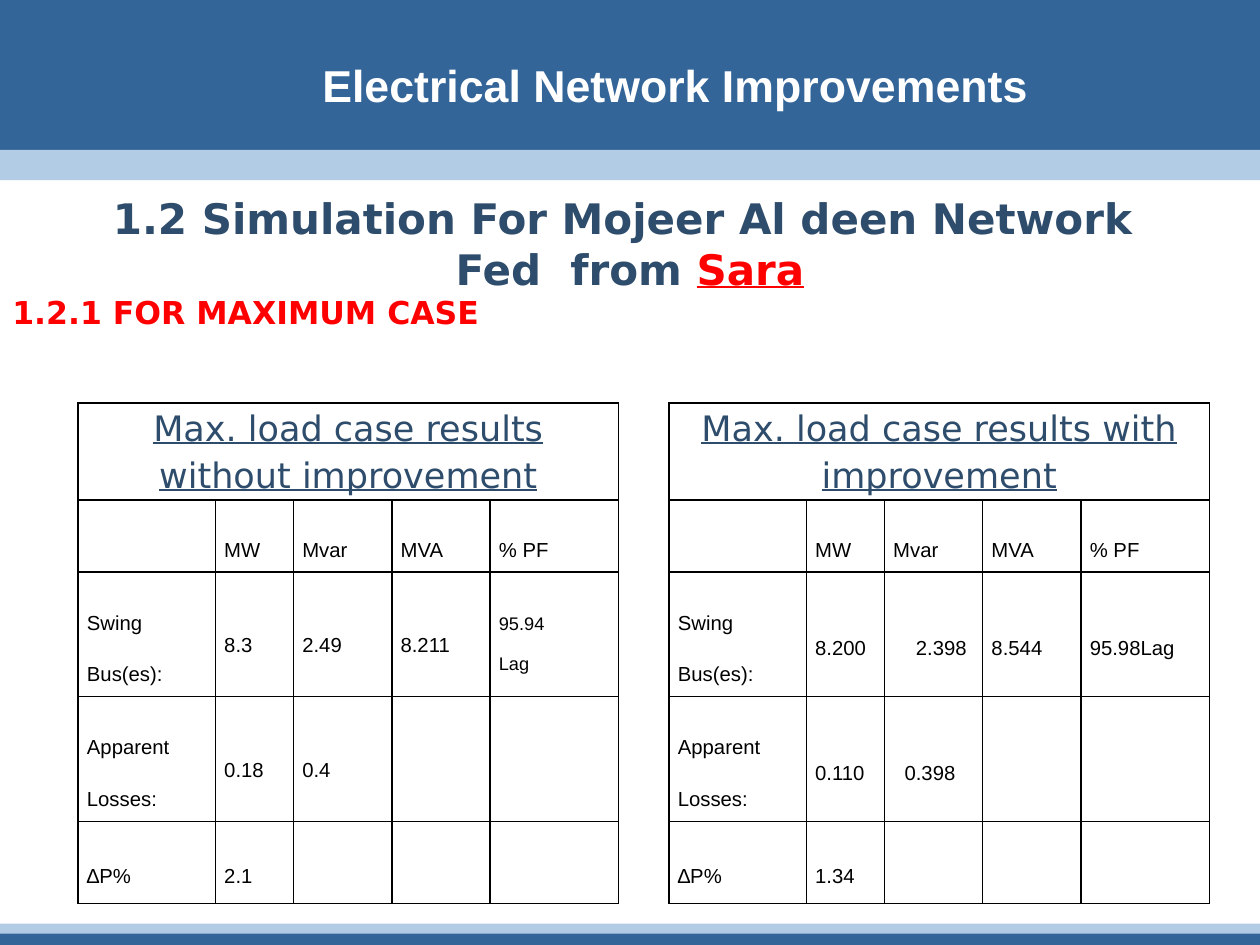
from lxml import etree
from pptx import Presentation
from pptx.dml.color import RGBColor
from pptx.enum.shapes import MSO_SHAPE
from pptx.enum.text import MSO_ANCHOR, PP_ALIGN
from pptx.oxml.ns import qn
from pptx.util import Inches, Pt

RECTANGLE = MSO_SHAPE.RECTANGLE
TOP, MIDDLE = MSO_ANCHOR.TOP, MSO_ANCHOR.MIDDLE
LEFT, CENTER, RIGHT = PP_ALIGN.LEFT, PP_ALIGN.CENTER, PP_ALIGN.RIGHT
COLORS = {"deep": "336599", "pale": "B3CCE6", "navy": "2E4C6B",
          "red": "FF0000", "white": "FFFFFF", "black": "000000"}
HEADING_FONT, BODY_FONT = "DejaVu Sans", "Arial"
WIDTH, HEIGHT = 10, 7.5
COLUMNS = [1.09, 0.62, 0.78, 0.78, 1.02]
ROWS = [0.77, 0.57, 0.99, 0.99, 0.65]
CELL_INSET = 0.07
HEADERS = ["", "MW", "Mvar", "MVA", "% PF"]
LABELS = ["Swing Bus(es):", "Apparent Losses:", "∆P%"]


def rgb(name):
    return RGBColor.from_string(COLORS[name])


def add_run(paragraph, text, size, color, font=HEADING_FONT, bold=False,
            underline=False, lowered=False):
    run = paragraph.add_run()
    run.text = text
    run.font.size = Pt(size)
    run.font.name = font
    run.font.bold = bold
    run.font.underline = underline
    run.font.color.rgb = rgb(color)
    if lowered:
        run.font._element.set("baseline", "-25000")


def add_band(slide, top, height, color):
    band = slide.shapes.add_shape(
        RECTANGLE, 0, Inches(top), Inches(WIDTH), Inches(height))
    band.shadow.inherit = False
    band.fill.solid()
    band.fill.fore_color.rgb = rgb(color)
    band.line.fill.background()


def add_text_frame(slide, box):
    frame = slide.shapes.add_textbox(*map(Inches, box)).text_frame
    frame.word_wrap = True
    frame.vertical_anchor = TOP
    return frame


def add_title(slide, box):
    paragraph = add_text_frame(slide, box).paragraphs[0]
    paragraph.alignment = RIGHT
    add_run(paragraph, "Electrical Network Improvements", 44, "white",
            BODY_FONT, bold=True, lowered=True)


def add_headings(slide, box):
    frame = add_text_frame(slide, box)
    lines = [
        (CENTER, [("1.2 Simulation For Mojeer Al deen Network ", 24, "navy", False)]),
        (CENTER, [("Fed  from ", 24, "navy", False), ("Sara", 24, "red", True)]),
        (LEFT, [("1.2.1 FOR MAXIMUM CASE", 18, "red", False)]),
    ]
    for index, (alignment, runs) in enumerate(lines):
        paragraph = frame.paragraphs[0] if index == 0 else frame.add_paragraph()
        paragraph.alignment = alignment
        for text, size, color, underline in runs:
            add_run(paragraph, text, size, color, bold=True, underline=underline)


def add_borders(cell):
    properties = cell._tc.get_or_add_tcPr()
    for index, side in enumerate(("a:lnL", "a:lnR", "a:lnT", "a:lnB")):
        line = etree.Element(qn(side), w=str(Pt(1)))
        fill = etree.SubElement(line, qn("a:solidFill"))
        etree.SubElement(fill, qn("a:srgbClr"), val=COLORS["black"])
        properties.insert(index, line)


def fill_cell(cell, text, size, spacing, indent):
    cell.vertical_anchor = MIDDLE
    cell.margin_left = Inches(CELL_INSET + indent)
    for index, line in enumerate(text.split("\n")):
        frame = cell.text_frame
        paragraph = frame.paragraphs[0] if index == 0 else frame.add_paragraph()
        paragraph.line_spacing = spacing
        add_run(paragraph, line, size, "black", BODY_FONT, lowered=True)


def add_results_table(slide, left, top, caption, values, spacing,
                      sizes=None, indents=None):
    sizes, indents = sizes or {}, indents or {}
    table = slide.shapes.add_table(
        len(ROWS), len(COLUMNS), Inches(left), Inches(top),
        Inches(sum(COLUMNS)), Inches(sum(ROWS))).table
    table.first_row = table.horz_banding = False
    for column, width in zip(table.columns, COLUMNS):
        column.width = Inches(width)
    for row, height in zip(table.rows, ROWS):
        row.height = Inches(height)
    for cell in table.iter_cells():
        cell.fill.background()
        cell.margin_left = cell.margin_right = Inches(CELL_INSET)
        cell.margin_top = cell.margin_bottom = 0
        add_borders(cell)

    heading = table.cell(0, 0)
    heading.merge(table.cell(0, len(COLUMNS) - 1))
    paragraph = heading.text_frame.paragraphs[0]
    paragraph.alignment = CENTER
    paragraph.line_spacing = 1.15
    add_run(paragraph, caption, 20, "navy", underline=True)

    body = [HEADERS] + [[label] + row for label, row in zip(LABELS, values)]
    for row, texts in enumerate(body, 1):
        for column, text in enumerate(texts):
            if text:
                place = (row, column)
                plain = row in (2, 3) and column > 0
                fill_cell(table.cell(*place), text, sizes.get(place, 20),
                          spacing if plain else 1.15, indents.get(place, 0))


def main():
    presentation = Presentation()
    presentation.slide_width = Inches(WIDTH)
    presentation.slide_height = Inches(HEIGHT)
    slide = presentation.slides.add_slide(presentation.slide_layouts[6])
    for top, height, color in [(0, 1.31, "deep"), (7.37, 0.13, "deep"),
                               (1.19, 0.24, "pale"), (7.33, 0.08, "pale")]:
        add_band(slide, top, height, color)
    add_title(slide, (1.56, 0, 6.7, 0.59))
    add_headings(slide, (0, 1.48, WIDTH, 1.99))
    add_results_table(
        slide, 5.31, 3.2, "Max. load case results with improvement",
        [["8.200", "2.398", "8.544", "95.98Lag"], ["0.110", "0.398"], ["1.34"]],
        1.15, indents={(2, 2): 0.18, (3, 2): 0.09})
    add_results_table(
        slide, 0.62, 3.2, "Max. load case results without improvement",
        [["8.3", "2.49", "8.211", "95.94\nLag"], ["0.18", "0.4"], ["2.1"]],
        1.0, sizes={(2, 4): 18})
    presentation.save("out.pptx")


if __name__ == "__main__":
    main()
